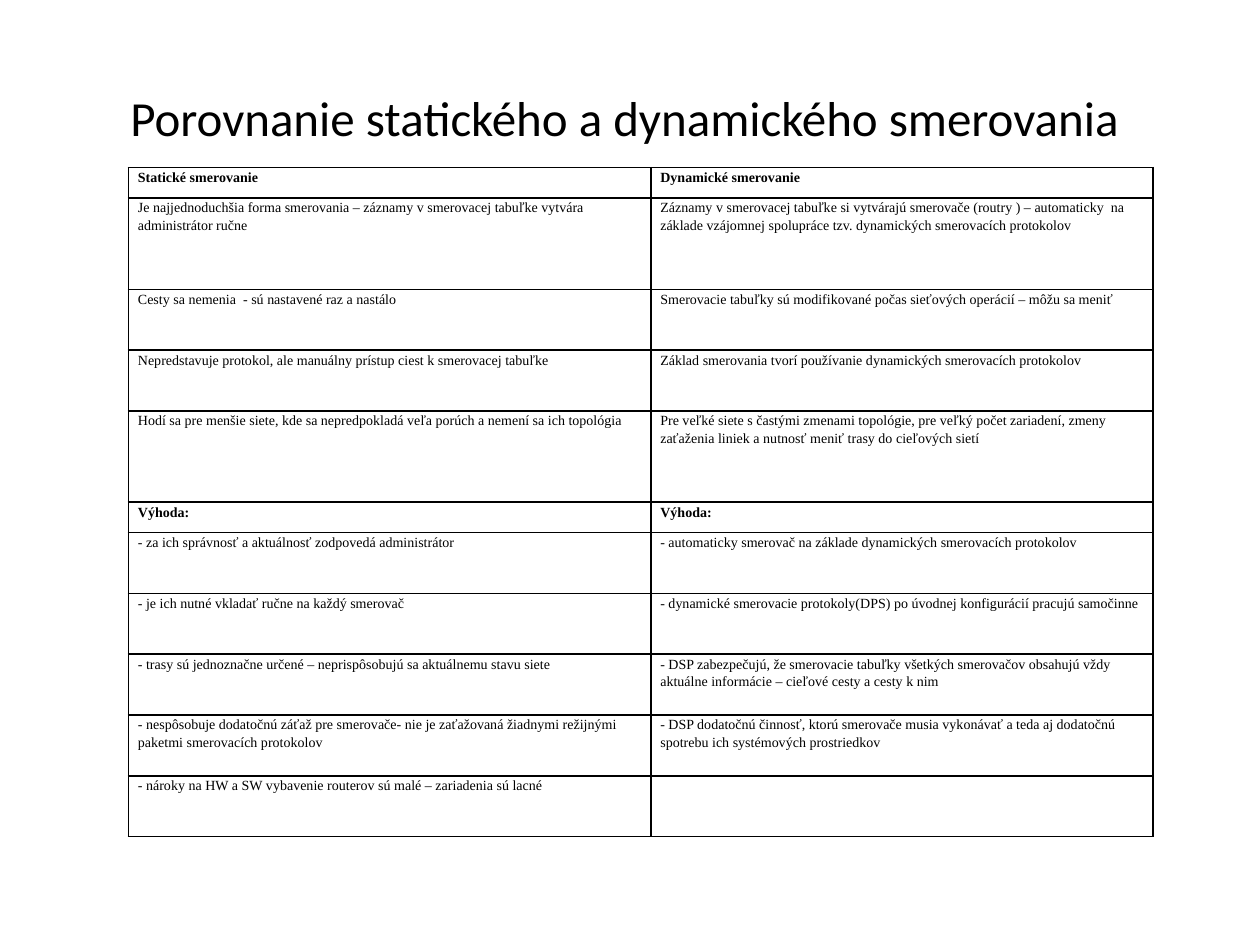
from lxml.etree import SubElement
from pptx import Presentation
from pptx.dml.color import RGBColor
from pptx.enum.text import MSO_ANCHOR as Anchor, PP_ALIGN as Align
from pptx.oxml.ns import qn
from pptx.util import Cm, Pt

COLORS = {"ink": "000000", "paper": "FFFFFF"}
TITLE_FONT, TABLE_FONT = "Calibri", "Times New Roman"

# Height in row units, static routing, dynamic routing; one-unit rows are headings
COMPARISON = [
    (1, "Statické smerovanie", "Dynamické smerovanie"),
    (3, "Je najjednoduchšia forma smerovania – záznamy v smerovacej tabuľke vytvára administrátor ručne",
     "Záznamy v smerovacej tabuľke si vytvárajú smerovače (routry ) – automaticky  na základe "
     "vzájomnej spolupráce tzv. dynamických smerovacích protokolov"),
    (2, "Cesty sa nemenia  - sú nastavené raz a nastálo",
     "Smerovacie tabuľky sú modifikované počas sieťových operácií – môžu sa meniť"),
    (2, "Nepredstavuje protokol, ale manuálny prístup ciest k smerovacej tabuľke",
     "Základ smerovania tvorí používanie dynamických smerovacích protokolov"),
    (3, "Hodí sa pre menšie siete, kde sa nepredpokladá veľa porúch a nemení sa ich topológia",
     "Pre veľké siete s častými zmenami topológie, pre veľký počet zariadení, zmeny zaťaženia "
     "liniek a nutnosť meniť trasy do cieľových sietí"),
    (1, "Výhoda:", "Výhoda:"),
    (2, "- za ich správnosť a aktuálnosť zodpovedá administrátor",
     "- automaticky smerovač na základe dynamických smerovacích protokolov"),
    (2, "- je ich nutné vkladať ručne na každý smerovač",
     "- dynamické smerovacie protokoly(DPS) po úvodnej konfigurácií pracujú samočinne"),
    (2, "- trasy sú jednoznačne určené – neprispôsobujú sa aktuálnemu stavu siete",
     "- DSP zabezpečujú, že smerovacie tabuľky všetkých smerovačov obsahujú vždy aktuálne "
     "informácie – cieľové cesty a cesty k nim"),
    (2, "- nespôsobuje dodatočnú záťaž pre smerovače- nie je zaťažovaná žiadnymi režijnými "
     "paketmi smerovacích protokolov",
     "- DSP dodatočnú činnosť, ktorú smerovače musia vykonávať a teda aj dodatočnú spotrebu "
     "ich systémových prostriedkov"),
    (2, "- nároky na HW a SW vybavenie routerov sú malé – zariadenia sú lacné", ""),
]


def add_run(paragraph, text, font, size, bold=False):
    run = paragraph.add_run()
    run.text = text
    run.font.name, run.font.size, run.font.bold = font, Pt(size), bold
    run.font.color.rgb = RGBColor.from_string(COLORS["ink"])


def add_title(slide, left, top, width, height):
    heading = slide.shapes.add_textbox(left, top, width, height).text_frame
    heading.word_wrap = True
    heading.vertical_anchor = Anchor.MIDDLE
    heading.paragraphs[0].alignment = Align.CENTER
    add_run(heading.paragraphs[0], "Porovnanie statického a dynamického smerovania ", TITLE_FONT, 28)


def add_borders(cell):
    # Border elements must come before the cell fill
    properties = cell._tc.get_or_add_tcPr()
    for side in ("a:lnL", "a:lnR", "a:lnT", "a:lnB"):
        line = SubElement(properties, qn(side), w=str(Pt(1)))
        SubElement(SubElement(line, qn("a:solidFill")), qn("a:srgbClr"), val=COLORS["ink"])


def fill_cell(cell, text, bold):
    add_borders(cell)
    cell.fill.solid()
    cell.fill.fore_color.rgb = RGBColor.from_string(COLORS["paper"])
    cell.margin_left = cell.margin_right = Cm(0.19)
    cell.margin_top = cell.margin_bottom = 0
    if text:
        paragraph = cell.text_frame.paragraphs[0]
        paragraph.line_spacing = 1.15
        add_run(paragraph, text, TABLE_FONT, 8, bold)


def add_comparison(slide, left, top, width, height):
    table = slide.shapes.add_table(len(COMPARISON), 2, left, top, width, height).table
    table.first_row = table.horz_banding = False

    # The static column is slightly wider
    static_column, dynamic_column = table.columns
    static_column.width = int(width * 0.51)
    dynamic_column.width = width - static_column.width

    row_unit = height / sum(units for units, *_ in COMPARISON)
    for row, (units, *texts) in zip(table.rows, COMPARISON):
        row.height = int(units * row_unit)
        for cell, text in zip(row.cells, texts):
            fill_cell(cell, text, bold=units == 1)


def main():
    deck = Presentation()
    deck.slide_width, deck.slide_height = Cm(25.4), Cm(19.05)
    slide = deck.slides.add_slide(deck.slide_layouts[6])
    add_title(slide, Cm(1.27), Cm(0.76), Cm(22.86), Cm(3.18))
    add_comparison(slide, Cm(2.59), Cm(3.38), Cm(20.65), Cm(13.49))
    deck.save("out.pptx")


if __name__ == "__main__":
    main()
